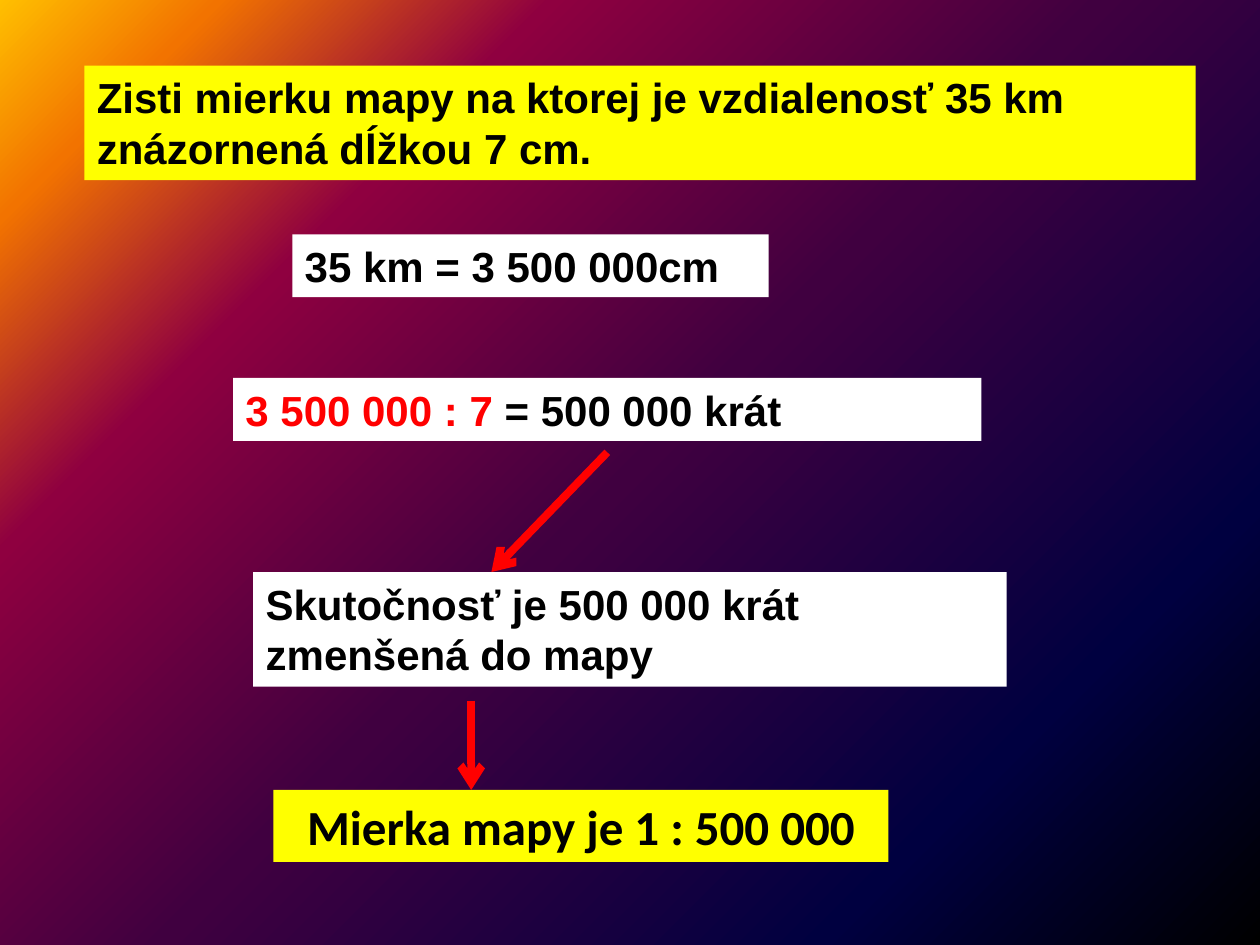
import pptx
import pptx.dml.color
import pptx.enum.shapes
import pptx.enum.text
import pptx.oxml
import pptx.oxml.ns
import pptx.util

Inches = pptx.util.Inches
BLACK, RED, WHITE, YELLOW = "000000", "FF0000", "FFFFFF", "FFFF00"
LEFT = pptx.enum.text.PP_ALIGN.LEFT
CENTER = pptx.enum.text.PP_ALIGN.CENTER

GRADIENT = [(0, "000000"), (20, "000040"), (50, "400040"),
            (75, "8F0040"), (90, "F27300"), (100, "FFBF00")]

WORKING = {"size": pptx.util.Pt(24), "name": "Arial", "bold": True}
RESULT = {"size": pptx.util.Pt(28), "name": "Calibri", "bold": True}

# (left, top, width, height), fill, alignment, font, [(text, colour)]
STEPS = [
    ((0.67, 0.52, 8.82, 0.91), YELLOW, LEFT, WORKING,
     [("Zisti mierku mapy na ktorej je vzdialenosť 35 km znázornená dĺžkou 7 cm.", BLACK)]),
    ((2.32, 1.86, 3.78, 0.5), WHITE, LEFT, WORKING,
     [("35 km = 3 500 000cm", BLACK)]),
    ((1.85, 3, 5.94, 0.5), WHITE, LEFT, WORKING,
     [("3 500 000 : 7 ", RED), ("= 500 000 krát", BLACK)]),
    ((2.01, 4.54, 5.98, 0.91), WHITE, LEFT, WORKING,
     [("Skutočnosť je 500 000 krát zmenšená do mapy", BLACK)]),
    ((2.17, 6.27, 4.88, 0.57), YELLOW, CENTER, RESULT,
     [("Mierka mapy je 1 : 500 000", BLACK)]),
]
# start x, start y, end x, end y
ARROWS = [(4.82, 3.59, 3.9, 4.54), (3.74, 5.56, 3.74, 6.27)]


def rgb(colour):
    return pptx.dml.color.RGBColor.from_string(colour)


def paint_background(slide):
    """Fill the slide with a circular gradient centred on its lower right corner."""
    slide.background.fill.solid()
    solid = slide.background._cSld.find(".//" + pptx.oxml.ns.qn("a:solidFill"))
    stops = "".join(f'<a:gs pos="{position * 1000}"><a:srgbClr val="{colour}"/></a:gs>'
                    for position, colour in GRADIENT)
    gradient = pptx.oxml.parse_xml(
        f'<a:gradFill {pptx.oxml.ns.nsdecls("a")} rotWithShape="1"><a:gsLst>{stops}</a:gsLst>'
        '<a:path path="circle"><a:fillToRect l="100000" t="100000"/></a:path></a:gradFill>')
    solid.getparent().replace(solid, gradient)


def add_step(slide, place, fill, alignment, font, parts):
    step = slide.shapes.add_textbox(*map(Inches, place))
    step.fill.solid()
    step.fill.fore_color.rgb = rgb(fill)
    step.text_frame.word_wrap = True
    step.text_frame.auto_size = pptx.enum.text.MSO_AUTO_SIZE.SHAPE_TO_FIT_TEXT
    paragraph = step.text_frame.paragraphs[0]
    paragraph.alignment = alignment
    for text, colour in parts:
        run = paragraph.add_run()
        run.text = text
        run.font.color.rgb = rgb(colour)
        for key, value in font.items():
            setattr(run.font, key, value)


def add_arrow(slide, ends):
    arrow = slide.shapes.add_connector(
        pptx.enum.shapes.MSO_CONNECTOR.STRAIGHT, *map(Inches, ends))
    arrow.line.color.rgb = rgb(RED)
    arrow.line.width = pptx.util.Pt(4.5)
    namespace = pptx.oxml.ns.nsdecls("a")
    arrow.line._get_or_add_ln().append(
        pptx.oxml.parse_xml(f'<a:tailEnd {namespace} type="arrow"/>'))
    arrow._element.spPr.append(pptx.oxml.parse_xml(f"<a:effectLst {namespace}/>"))


def main():
    deck = pptx.Presentation()
    deck.slide_width, deck.slide_height = Inches(10), Inches(7.5)
    slide = deck.slides.add_slide(deck.slide_layouts[6])
    paint_background(slide)
    for step in STEPS:
        add_step(slide, *step)
    for ends in ARROWS:
        add_arrow(slide, ends)
    deck.save("out.pptx")


if __name__ == "__main__":
    main()
